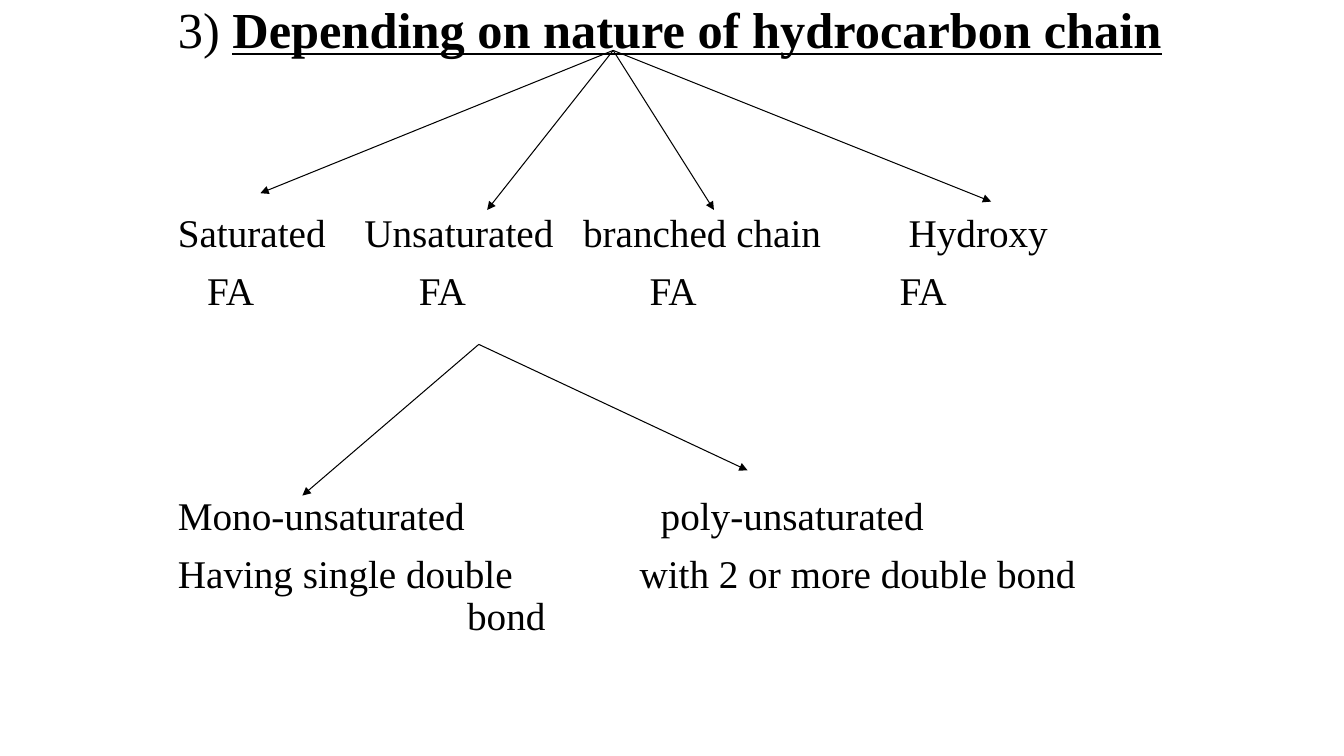
from lxml.etree import SubElement
from pptx import Presentation
from pptx.dml.color import RGBColor
from pptx.enum.shapes import MSO_CONNECTOR
from pptx.enum.text import MSO_ANCHOR
from pptx.oxml.ns import qn
from pptx.util import Inches, Pt

BLACK = RGBColor(0x00, 0x00, 0x00)
WHITE = RGBColor(0xFF, 0xFF, 0xFF)
CELL = Inches(1) // 12
COLUMNS, ROWS = 160, 90


class Diagram:
    font_name = "Times New Roman"
    line_width = Pt(0.75)
    line_spacing = 0.9

    def __init__(self, deck):
        self.page = deck.slides.add_slide(deck.slide_layouts[6])
        self.page.background.fill.solid()
        self.page.background.fill.fore_color.rgb = WHITE

    def text_frame(self, column, row, columns, rows):
        box = self.page.shapes.add_textbox(
            column * CELL, row * CELL, columns * CELL, rows * CELL)
        frame = box.text_frame
        frame.word_wrap = True
        frame.vertical_anchor = MSO_ANCHOR.TOP
        return frame

    def span(self, para, text, size, emphasis=False):
        span = para.add_run()
        span.text = text
        span.font.name = self.font_name
        span.font.size = Pt(size)
        span.font.bold = emphasis
        span.font.underline = emphasis
        span.font.color.rgb = BLACK

    def tabbed_line(self, frame, labels, stops, gap):
        para = frame.add_paragraph()
        para.line_spacing = self.line_spacing
        para.space_before = Pt(gap)
        tabs = SubElement(para._p.get_or_add_pPr(), qn("a:tabLst"))
        for stop in stops:
            SubElement(tabs, qn("a:tab"), pos=str(Inches(stop)), algn="l")
        self.span(para, "\t".join(labels), 28)

    def arrow(self, start, end):
        points = [place * CELL for place in (*start, *end)]
        arrow = self.page.shapes.add_connector(MSO_CONNECTOR.STRAIGHT, *points)
        arrow.line.color.rgb = BLACK
        arrow.line.width = self.line_width
        SubElement(arrow.line._get_or_add_ln(), qn("a:tailEnd"), type="triangle")
        SubElement(arrow._element.spPr, qn("a:effectLst"))


def main():
    deck = Presentation()
    deck.slide_width, deck.slide_height = COLUMNS * CELL, ROWS * CELL
    diagram = Diagram(deck)

    frame = diagram.text_frame(20, 0, 120, ROWS)
    title = frame.paragraphs[0]
    title.line_spacing = diagram.line_spacing
    diagram.span(title, "3) ", 36)
    diagram.span(title, "Depending on nature of hydrocarbon chain", 36, True)

    lines = [
        (["Saturated", "Unsaturated", "branched chain", "Hydroxy"],
         [1.85, 4.02, 7.25], 110),
        (["", "FA", "FA", "FA", "FA"], [0.29, 2.39, 4.68, 7.16], 11),
        (["Mono-unsaturated", "poly-unsaturated"], [4.79], 131),
        (["Having single double", "with 2 or more double bond"], [4.58], 11),
        (["", "bond"], [2.87], 0),
    ]
    for labels, stops, gap in lines:
        diagram.tabbed_line(frame, labels, stops, gap)

    branches = {
        (73, 6): [(31, 23), (58, 25), (85, 25), (118, 24)],
        (57, 41): [(36, 59), (89, 56)],
    }
    for start, ends in branches.items():
        for end in ends:
            diagram.arrow(start, end)

    deck.save("out.pptx")


if __name__ == "__main__":
    main()
